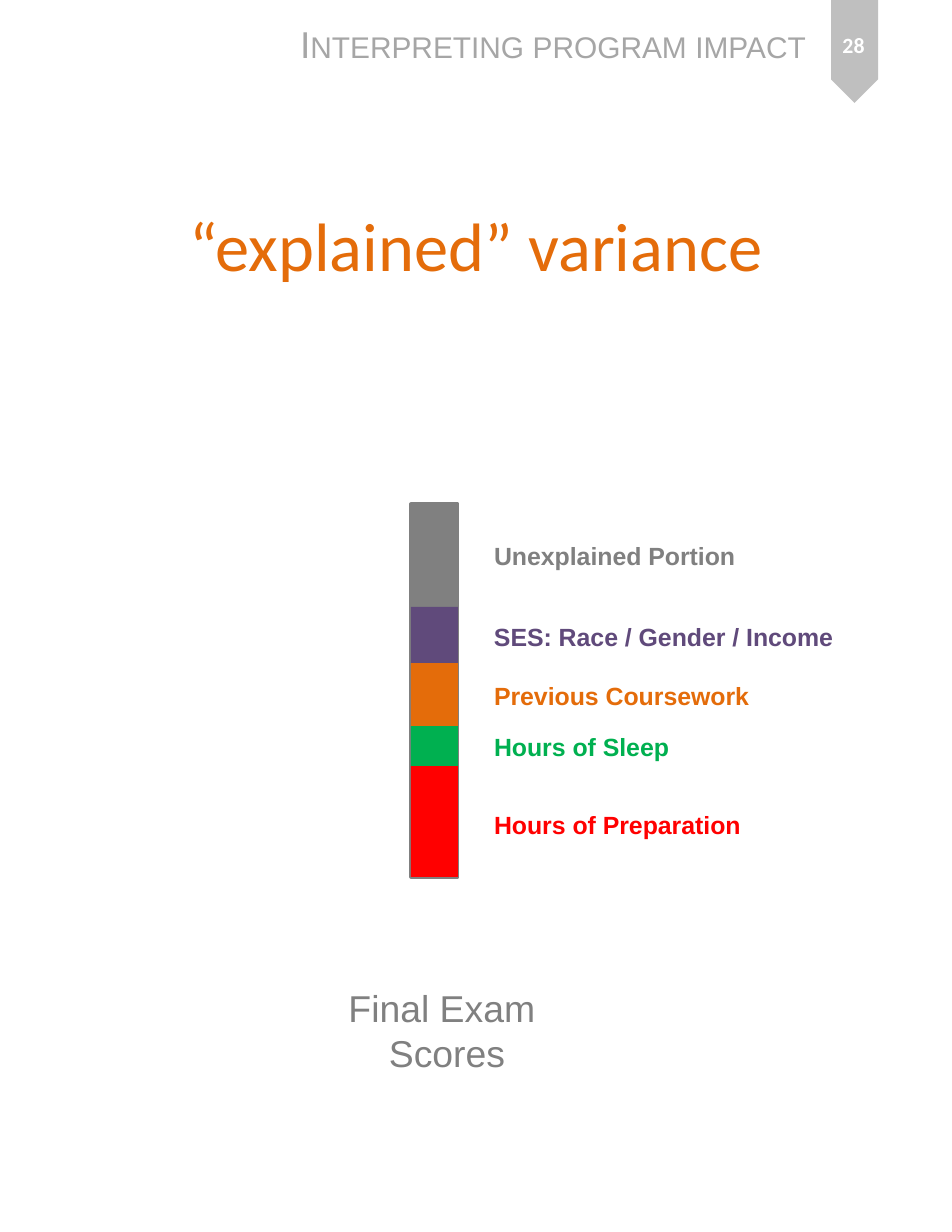
from dataclasses import dataclass

from pptx import Presentation
from pptx import util as u
from pptx.dml.color import RGBColor
from pptx.enum import shapes, text


@dataclass(frozen=True)
class Theme:
    head: str = "Calibri"
    body: str = "Arial"
    gray: str = "808080"
    ribbon: str = "BFBFBF"
    header: str = "A6A6A6"
    white: str = "FFFFFF"
    purple: str = "604A7B"
    orange: str = "E46C0A"
    green: str = "00B050"
    red: str = "FF0000"
    title_size: int = 44
    large_size: int = 24
    label_size: int = 16
    number_size: int = 14


T = Theme()
BAR_X, BAR_Y, BAR_W = 411, 504, 47
LABEL_X, LABEL_H = 483, 41

# name, colour, segment height, label top, label width; from top to bottom
SEGMENTS = [
    ("Unexplained Portion", T.gray, 103, 535, 267),
    ("SES: Race / Gender / Income", T.purple, 56, 616, 366),
    ("Previous Coursework", T.orange, 63, 675, 281),
    ("Hours of Sleep", T.green, 40, 726, 199),
    ("Hours of Preparation", T.red, 111, 804, 272),
]


def px(n):
    return u.Emu(round(n * 914400 / 112))


def write(tf, lines, size, color, font=T.body, bold=False, align=None,
          anchor=None, small_caps=False):
    """Fill a text frame with one paragraph per line."""
    if anchor is not None:
        tf.vertical_anchor = anchor
    for i, line in enumerate(lines.split("\n")):
        p = tf.paragraphs[0] if i == 0 else tf.add_paragraph()
        p.alignment = align
        r = p.add_run()
        r.text = line
        r.font.name, r.font.size, r.font.bold = font, u.Pt(size), bold
        r.font.color.rgb = RGBColor.from_string(color)
        if small_caps:
            r.font._element.set("cap", "small")


def add_text(slide, box, lines, size, color, wrap=False, **fmt):
    tf = slide.shapes.add_textbox(*map(px, box)).text_frame
    tf.word_wrap = wrap
    if not wrap:
        tf.auto_size = text.MSO_AUTO_SIZE.SHAPE_TO_FIT_TEXT
    write(tf, lines, size, color, **fmt)


def add_block(slide, box, color, kind=shapes.MSO_SHAPE.RECTANGLE, line=None):
    sp = slide.shapes.add_shape(kind, *map(px, box))
    sp.shadow.inherit = False
    sp.fill.solid()
    sp.fill.fore_color.rgb = RGBColor.from_string(color)
    if line:
        sp.line.color.rgb = RGBColor.from_string(color)
        sp.line.width = u.Pt(line)
    else:
        sp.line.fill.background()
    return sp


def add_header(slide):
    ribbon = add_block(slide, (803, 28, 103, 47), T.ribbon,
                       shapes.MSO_SHAPE.PENTAGON)
    ribbon.rotation = 90
    add_text(slide, (289, 16, 556, 56), "Interpreting program impact",
             T.large_size, T.header, small_caps=True)
    add_text(slide, (816, 12, 75, 66), "28", T.number_size, T.white, wrap=True,
             font=T.head, bold=True, align=text.PP_ALIGN.CENTER,
             anchor=text.MSO_ANCHOR.MIDDLE)


def set_title(slide, box, words):
    sp = slide.shapes.title
    sp.left, sp.top, sp.width, sp.height = map(px, box)
    write(sp.text_frame, words, T.title_size, T.orange, font=T.head,
          align=text.PP_ALIGN.CENTER, anchor=text.MSO_ANCHOR.MIDDLE)


def add_variance_bar(slide):
    """Draw the outlined whole, then stack the explained parts over it."""
    total = sum(height for _, _, height, _, _ in SEGMENTS)
    add_block(slide, (BAR_X, BAR_Y, BAR_W, total), T.gray, line=2)
    y = BAR_Y
    for i, (name, color, height, label_y, label_w) in enumerate(SEGMENTS):
        if i > 0:
            add_block(slide, (BAR_X, y, BAR_W, height), color)
        add_text(slide, (LABEL_X, label_y, label_w, LABEL_H), name,
                 T.label_size, color, bold=True)
        y += height


def main():
    prs = Presentation()
    prs.slide_width, prs.slide_height = px(952), px(1232)
    slide = prs.slides.add_slide(prs.slide_layouts[5])
    add_header(slide)
    set_title(slide, (48, 142, 857, 205), "“explained” variance")
    add_variance_bar(slide)
    add_text(slide, (336, 980, 222, 102), "Final Exam \nScores",
             T.large_size, T.gray, align=text.PP_ALIGN.CENTER)
    prs.save("out.pptx")


if __name__ == "__main__":
    main()
